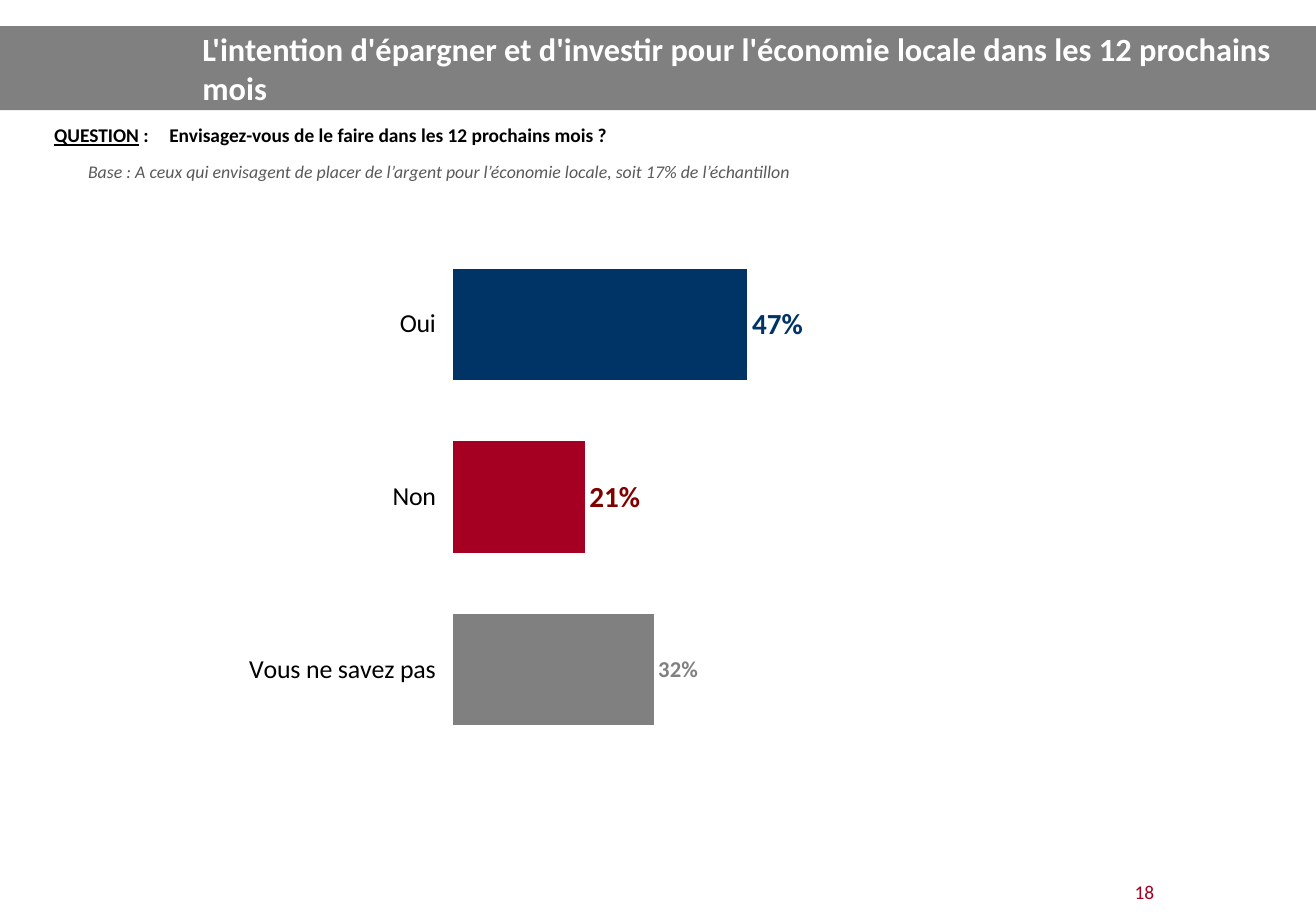
from lxml import etree
from pptx import Presentation
from pptx.chart.data import CategoryChartData
from pptx.dml.color import RGBColor
from pptx.enum.chart import XL_CHART_TYPE, XL_LABEL_POSITION, XL_TICK_LABEL_POSITION, XL_TICK_MARK
from pptx.enum.shapes import MSO_SHAPE
from pptx.enum.text import MSO_ANCHOR, MSO_AUTO_SIZE, PP_ALIGN
from pptx.oxml.ns import qn
from pptx.util import Cm, Pt

BAR = XL_CHART_TYPE.BAR_CLUSTERED
OUTSIDE_END = XL_LABEL_POSITION.OUTSIDE_END
LOW = XL_TICK_LABEL_POSITION.LOW
TICK_OUT = XL_TICK_MARK.OUTSIDE
RECT = MSO_SHAPE.RECTANGLE
MIDDLE, TOP = MSO_ANCHOR.MIDDLE, MSO_ANCHOR.TOP
NO_AUTOFIT = MSO_AUTO_SIZE.NONE
LEFT, CENTER, JUSTIFY = PP_ALIGN.LEFT, PP_ALIGN.CENTER, PP_ALIGN.JUSTIFY

FONT = "Calibri"
GREY = "808080"
RED = "A50021"
SLIDE_W, SLIDE_H = 28.68, 19.99
BANNER_TOP, BANNER_H = 0.57, 1.83
TITLE_LEFT, TITLE_W = 4.16, 24.08
CHART_BOX = (4.99, 5.18, 20.02, 11.3)
PLOT_AREA = {"x": 0.244, "y": 0.001, "w": 0.682, "h": 0.999}

TITLE = "L'intention d'épargner et d'investir pour l'économie locale dans les 12 prochains mois"
TITLE_FORMAT = {"size": 20, "bold": True, "color": "FFFFFF"}
QUESTION_FORMAT = {"size": 12, "bold": True, "color": "000000"}

TEXTS = [
    {
        "box": (1.92, 3.51, 22.05, 0.48),
        "insets": (0, 0, 0, 0),
        "align": JUSTIFY,
        "hanging": 0,
        "runs": [("Base : A ceux qui envisagent de placer de l’argent pour l’économie locale, "
                  "soit 17% de l’échantillon", {"size": 11, "italic": True, "color": "595959"})],
    },
    {
        "box": (0.95, 2.59, 27.1, 0.71),
        "insets": (0.23, 0.1, 0.91, 0.1),
        "align": JUSTIFY,
        "hanging": 2.51,
        "runs": [("QUESTION", {**QUESTION_FORMAT, "underline": True}),
                 (" :\tEnvisagez-vous de le faire dans les 12 prochains mois ?", QUESTION_FORMAT)],
    },
    {
        "box": (24.19, 19.05, 1.5, 0.76),
        "insets": (0.25, 0.13, 0.25, 0.13),
        "align": CENTER,
        "hanging": 0,
        "runs": [("18", {"size": 12, "color": RED})],
    },
]

ANSWERS = [
    ("Oui ", 0.47, "003366", {"size": 18, "bold": True, "color": "003366"}),
    ("Non ", 0.21, RED, {"size": 18, "bold": True, "color": "800000"}),
    ("Vous ne savez pas ", 0.32, GREY, {"size": 14, "bold": True, "color": GREY}),
]


def rgb(value):
    return RGBColor.from_string(value)


def set_font(font, values):
    font.name = FONT
    for name, value in values.items():
        if name == "color":
            font.color.rgb = rgb(value)
        else:
            setattr(font, name, Pt(value) if name == "size" else value)


def place(sp, box):
    for name, value in zip(("left", "top", "width", "height"), box):
        setattr(sp, name, Cm(value))


def write(sp, runs, align, insets, anchor):
    tf = sp.text_frame
    tf.word_wrap = True
    tf.auto_size = NO_AUTOFIT
    tf.vertical_anchor = anchor
    for side, value in zip(("left", "top", "right", "bottom"), insets):
        setattr(tf, f"margin_{side}", Cm(value))
    p = tf.paragraphs[0]
    p.alignment = align
    for text, values in runs:
        r = p.add_run()
        r.text = text
        set_font(r.font, values)
    return p


def add_banner(s):
    banner = s.shapes.add_shape(RECT, 0, Cm(BANNER_TOP), Cm(SLIDE_W), Cm(BANNER_H))
    banner.shadow.inherit = False
    banner.fill.solid()
    banner.fill.fore_color.rgb = rgb(GREY)
    banner.line.fill.background()
    title = s.shapes.title
    banner._element.addnext(title._element)
    place(title, (TITLE_LEFT, BANNER_TOP, TITLE_W, BANNER_H))
    write(title, [(TITLE, TITLE_FORMAT)], LEFT, (0.25, 0.13, 0.25, 0.13), MIDDLE)


def add_texts(s):
    for item in TEXTS:
        sp = s.shapes.add_textbox(*map(Cm, item["box"]))
        p = write(sp, item["runs"], item["align"], item["insets"], TOP)
        if item["hanging"]:
            pPr = p._p.get_or_add_pPr()
            pPr.set("marL", str(Cm(item["hanging"])))
            pPr.set("indent", str(-Cm(item["hanging"])))


def set_plot_area(chart):
    area = chart._chartSpace.find(".//" + qn("c:plotArea"))
    layout = etree.Element(qn("c:layout"))
    manual = etree.SubElement(layout, qn("c:manualLayout"))
    settings = {"layoutTarget": "inner", "xMode": "edge", "yMode": "edge", **PLOT_AREA}
    for tag, value in settings.items():
        etree.SubElement(manual, qn(f"c:{tag}")).set("val", str(value))
    area.insert(0, layout)


def add_answers(s):
    data = CategoryChartData(number_format="0%")
    data.categories = [answer[0] for answer in ANSWERS]
    data.add_series("Series 1", [answer[1] for answer in ANSWERS])
    chart = s.shapes.add_chart(BAR, *map(Cm, CHART_BOX), data).chart
    chart.has_title = False
    chart.has_legend = False
    set_font(chart.font, {"size": 18, "color": "000000"})

    axis = chart.category_axis
    axis.reverse_order = True
    axis.major_tick_mark = TICK_OUT
    axis.tick_label_position = LOW
    axis.format.line.fill.background()
    set_font(axis.tick_labels.font, {"size": 16, "color": "000000"})

    scale = chart.value_axis
    scale.minimum_scale, scale.maximum_scale = 0, 1
    scale.has_major_gridlines = False
    scale.visible = False

    plot = chart.plots[0]
    plot.gap_width = 55
    plot.vary_by_categories = False
    for i, (_, _, color, label_format) in enumerate(ANSWERS):
        point = plot.series[0].points[i]
        point.format.fill.solid()
        point.format.fill.fore_color.rgb = rgb(color)
        set_font(point.data_label.font, label_format)
        point.data_label.position = OUTSIDE_END
    set_plot_area(chart)


def main():
    prs = Presentation()
    prs.slide_width, prs.slide_height = Cm(SLIDE_W), Cm(SLIDE_H)
    s = prs.slides.add_slide(prs.slide_layouts[5])
    add_banner(s)
    add_texts(s)
    add_answers(s)
    prs.save("out.pptx")


if __name__ == "__main__":
    main()
